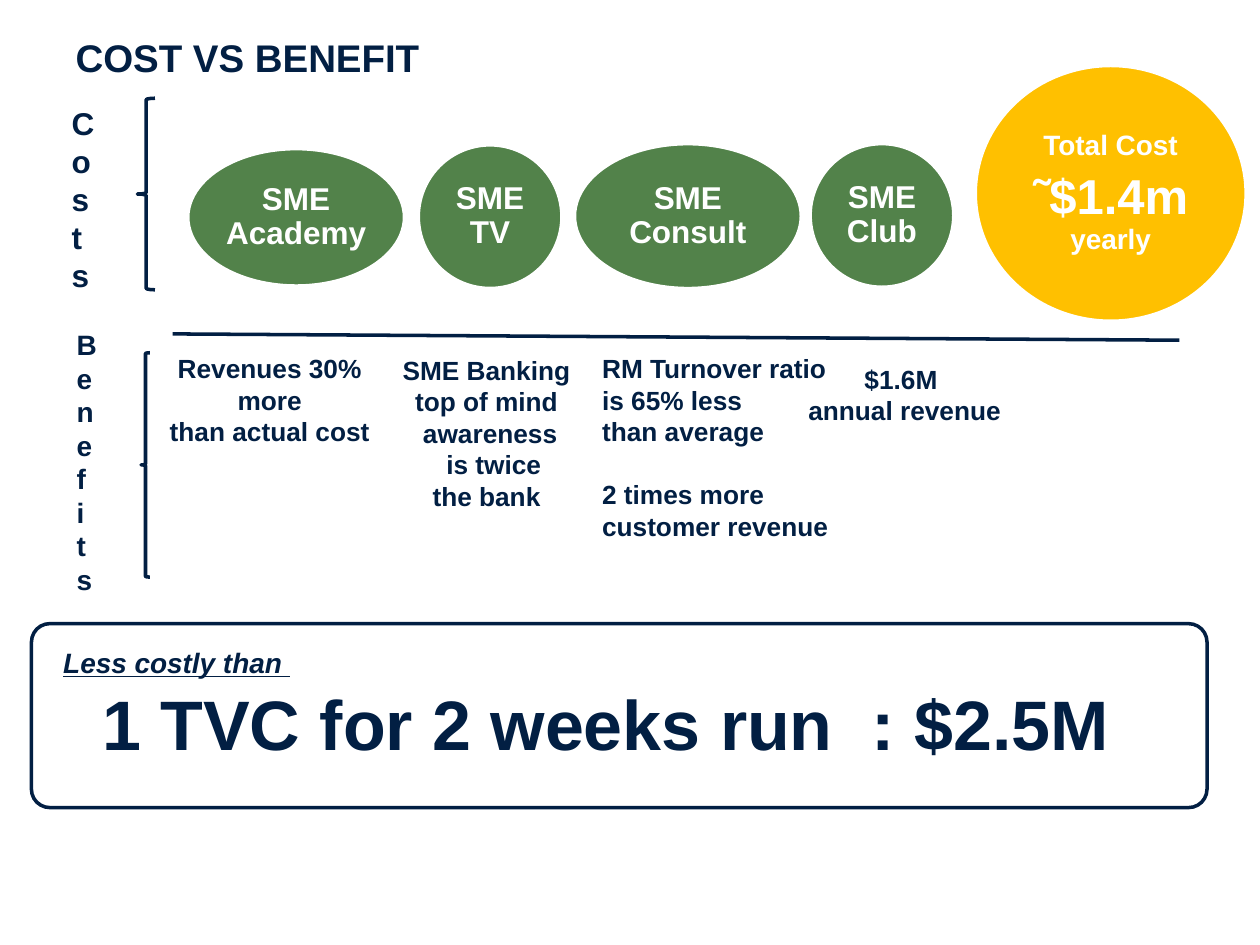
import pptx
import pptx.util
import pptx.dml.color
import pptx.enum.shapes
import pptx.enum.text
import lxml.etree
from dataclasses import dataclass

Inches, Pt = pptx.util.Inches, pptx.util.Pt
RGB = pptx.dml.color.RGBColor.from_string
Kind = pptx.enum.shapes.MSO_SHAPE
Align = pptx.enum.text.PP_ALIGN
Anchor = pptx.enum.text.MSO_ANCHOR
Fit = pptx.enum.text.MSO_AUTO_SIZE


@dataclass
class Theme:
    font: str = "Arial"
    navy: str = "021F43"
    green: str = "52824A"
    gold: str = "FFC000"
    white: str = "FFFFFF"
    title: int = 22
    label: int = 18
    note: int = 16
    body: int = 15
    total: int = 28
    big: int = 40
    line: int = 2


theme = Theme()


def write(frame, paras, color, frame_fmt, para_fmt):
    """Fill a text frame; each paragraph is a list of (text, size) runs."""
    for key, value in frame_fmt.items():
        setattr(frame, key, value)
    for i, runs in enumerate(paras):
        para = frame.add_paragraph() if i else frame.paragraphs[0]
        for key, value in para_fmt.items():
            setattr(para, key, value)
        for text, size in runs:
            run = para.add_run()
            run.text = text
            fmt = {"name": theme.font, "size": Pt(size), "bold": True}
            for key, value in fmt.items():
                setattr(run.font, key, value)
            run.font.color.rgb = RGB(color)


def draw(kind, box, fill, line):
    """Add a preset shape with a flat fill, or none, and a plain line."""
    shape = slide.shapes.add_shape(kind, *map(Inches, box))
    shape.shadow.inherit = False
    if fill:
        shape.fill.solid()
        shape.fill.fore_color.rgb = RGB(fill)
    else:
        shape.fill.background()
    shape.line.color.rgb = RGB(line)
    shape.line.width = Pt(theme.line)
    return shape


deck = pptx.Presentation()
deck.slide_width, deck.slide_height = Inches(10), Inches(7.5)
slide = deck.slides.add_slide(deck.slide_layouts[5])

# Title
title = slide.shapes.title
place = {"left": 0.6, "top": 0.27, "width": 8.64, "height": 0.37}
for key, value in place.items():
    setattr(title, key, Inches(value))
flush = {"margin_" + side: 0 for side in ("left", "top", "right", "bottom")}
write(title.text_frame, [[("COST VS BENEFIT", theme.title)]], theme.navy,
      {**flush, "vertical_anchor": Anchor.BOTTOM, "auto_size": Fit.NONE,
       "word_wrap": True},
      {"alignment": Align.LEFT})

# Cost ovals
inset = {key: Inches(0.03) for key in flush}
middle = {**inset, "vertical_anchor": Anchor.MIDDLE, "word_wrap": True}
tight = {"line_spacing": 0.9, "space_after": Pt(6)}
centred = {**tight, "alignment": Align.CENTER}
ovals = [
    ((1.49, 1.18, 1.72, 1.09), theme.green, [[("SME Academy", theme.label)]]),
    ((3.32, 1.15, 1.14, 1.14), theme.green, [[("SME TV", theme.label)]]),
    ((4.56, 1.14, 1.8, 1.15), theme.green, [[("SME Consult", theme.label)]]),
    ((6.43, 1.14, 1.14, 1.14), theme.green, [[("SME Club", theme.label)]]),
    ((7.74, 0.52, 2.15, 2.03), theme.gold,
     [[("Total Cost", theme.note)],
      [("˜$1.4m ", theme.total), ("yearly", theme.note)]]),
]
for box, fill, paras in ovals:
    oval = draw(Kind.OVAL, box, fill, theme.white)
    write(oval.text_frame, paras, theme.white, middle, centred)

# Divider between costs and benefits
rule = slide.shapes.add_connector(
    pptx.enum.shapes.MSO_CONNECTOR.STRAIGHT,
    Inches(1.37), Inches(2.65), Inches(9.36), Inches(2.7))
rule.line.color.rgb = RGB(theme.navy)
rule.line.width = Pt(theme.line)
lxml.etree.SubElement(rule._element.spPr, pptx.oxml.ns.qn("a:effectLst"))

# Benefits under each cost
grow = {"word_wrap": False, "auto_size": Fit.SHAPE_TO_FIT_TEXT}
gains = [
    ((1.24, 2.75, 1.8, 0.86), Align.CENTER,
     ["Revenues 30%", "more", "than actual cost"]),
    ((3.09, 2.76, 1.6, 1.36), Align.CENTER,
     ["SME Banking ", "top of mind ", "awareness", " is twice", "the bank "]),
    ((4.68, 2.75, 2.02, 1.62), Align.LEFT,
     ["RM Turnover ratio", "is 65% less", "than average",
      "2 times more", "customer revenue"]),
    ((6.31, 2.83, 1.74, 0.61), Align.CENTER, ["$1.6M ", "annual revenue"]),
]
for box, align, lines in gains:
    frame = slide.shapes.add_textbox(*map(Inches, box)).text_frame
    write(frame, [[(text, theme.body)] for text in lines], theme.navy, grow,
          {"alignment": align})
    for para in frame.paragraphs:
        if para.text == "2 times more":
            para.space_before = Pt(18)

# Row labels and braces
rows = [
    ("Costs", theme.label, (0.47, 0.78, 0.53, 1.75), (1.09, 0.78, 0.14, 1.52)),
    ("Benefits", theme.note, (0.51, 2.55, 0.49, 2.44), (1.12, 2.8, 0.07, 1.78)),
]
for text, size, box, brace in rows:
    draw(Kind.LEFT_BRACE, brace, None, theme.navy)
    frame = slide.shapes.add_textbox(*map(Inches, box)).text_frame
    write(frame, [[(text, size)]], theme.navy, grow, {})
    frame._txBody.bodyPr.set("vert", "wordArtVert")

# Comparison panel
panel = draw(Kind.ROUNDED_RECTANGLE, (0.25, 4.95, 9.33, 1.46), None, theme.navy)
panel.adjustments[0] = 0.1
frame = panel.text_frame
write(frame,
      [[("Less costly than ", theme.note)],
       [("1 TVC for 2 weeks run", theme.big), (" ", theme.big),
        (": $2.5M", theme.big)]],
      theme.navy,
      {**middle, "margin_left": Inches(0.21), "margin_bottom": Inches(0.16)},
      {**tight, "alignment": Align.LEFT})
lead, claim = frame.paragraphs
for key in ("italic", "underline"):
    setattr(lead.runs[0].font, key, True)
claim._p.get_or_add_pPr().set("marL", str(Inches(0.31)))
claim.runs[1]._r.get_or_add_rPr().set("spc", "1100")  # wide gap before colon

deck.save("out.pptx")
